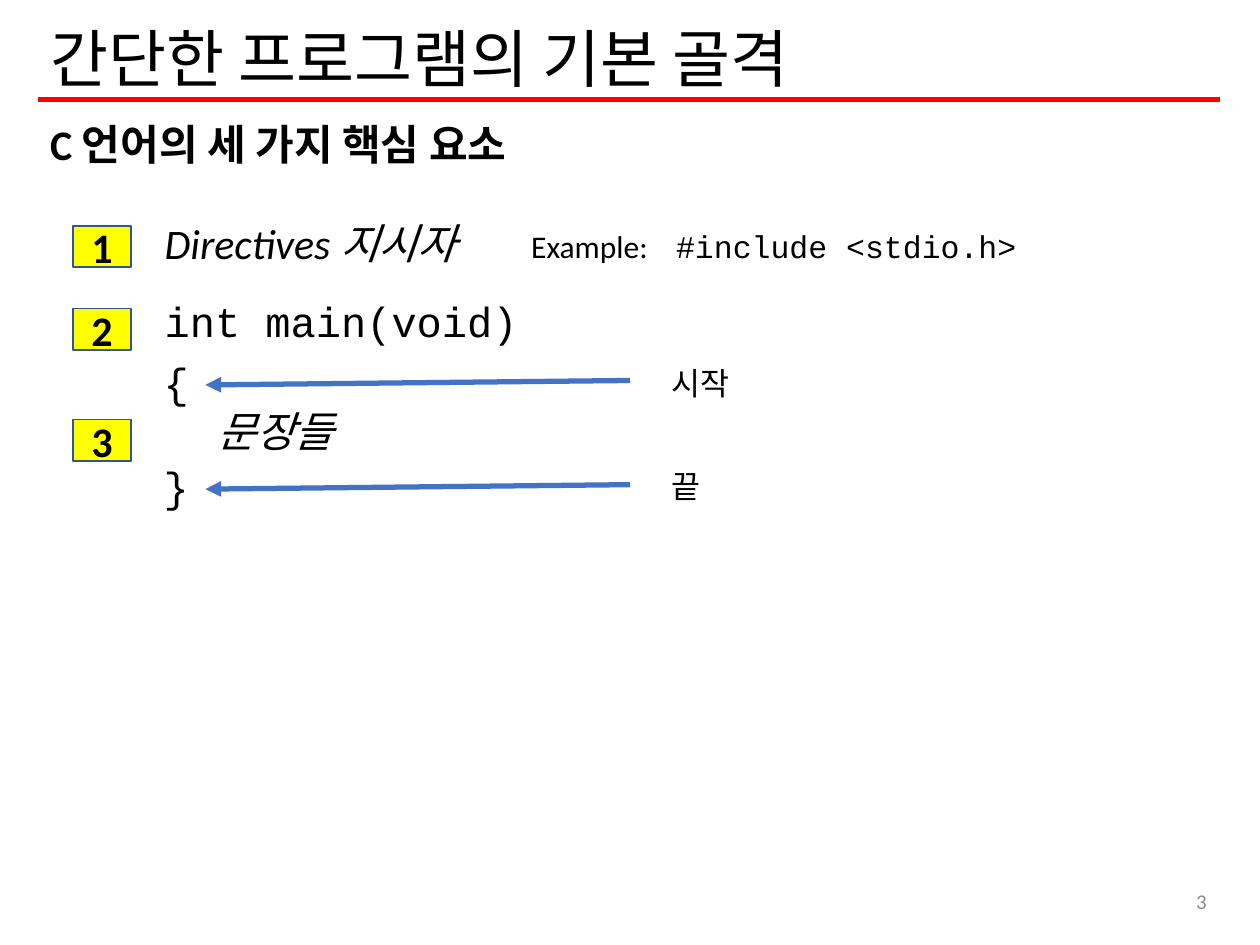
from lxml import etree
from pptx import Presentation
from pptx.dml.color import RGBColor
from pptx.enum.shapes import MSO_CONNECTOR, MSO_SHAPE
from pptx.enum.text import MSO_ANCHOR, MSO_AUTO_SIZE, PP_ALIGN
from pptx.oxml.ns import qn
from pptx.util import Cm, Pt

STRAIGHT = MSO_CONNECTOR.STRAIGHT
RECTANGLE = MSO_SHAPE.RECTANGLE
MIDDLE = MSO_ANCHOR.MIDDLE
LEFT, CENTER, RIGHT = PP_ALIGN.LEFT, PP_ALIGN.CENTER, PP_ALIGN.RIGHT
SANS, MONO = "Calibri", "Courier New"


def write(shape, text, size=24, font=SANS, color="000000", bold=False,
          italic=False, align=LEFT, spacing=1.0, wrap=True):
    """Fill a shape with one uniformly formatted paragraph and return it."""
    frame = shape.text_frame
    frame.word_wrap = wrap
    frame.auto_size = MSO_AUTO_SIZE.NONE
    paragraph = frame.paragraphs[0]
    paragraph.text = text
    paragraph.alignment = align
    paragraph.line_spacing = spacing
    paragraph.font.size = Pt(size)
    paragraph.font.name = font
    paragraph.font.bold = bold
    paragraph.font.italic = italic
    paragraph.font.color.rgb = RGBColor.from_string(color)
    return paragraph


def add_line(x1, y1, x2, y2, color):
    line = slide.shapes.add_connector(STRAIGHT, Cm(x1), Cm(y1), Cm(x2), Cm(y2))
    line.line.color.rgb = RGBColor.from_string(color)
    line.line.width = Pt(3)
    properties = line._element.spPr
    etree.SubElement(properties, qn("a:effectLst"))
    return line


deck = Presentation()
deck.slide_width, deck.slide_height = Cm(25.4), Cm(19.05)
slide = deck.slides.add_slide(deck.slide_layouts[5])

# Title with its rule
add_line(0.76, 2.01, 24.59, 2.01, "FF0000")
title = slide.shapes.title
title.left, title.top, title.width, title.height = Cm(0.76), Cm(0.69), Cm(23.83), Cm(1.14)
title.text_frame.vertical_anchor = MIDDLE
write(title, "간단한 프로그램의 기본 골격", size=36, spacing=0.9)

# Slide number
number_box = slide.shapes.add_textbox(Cm(17.93), Cm(17.65), Cm(6.65), Cm(1.02))
number_box.text_frame.vertical_anchor = MIDDLE
write(number_box, "3", size=12, color="8C8C8C", align=RIGHT)

# Heading, program skeleton and labels
code = {"font": MONO, "spacing": 0.8}
term = {"italic": True, "spacing": 0.8}
label = {"font": MONO, "size": 18, "wrap": False}
texts = [
    ("C 언어의 세 가지 핵심 요소", 0.76, 2.26, 10.46, 1.27, {"bold": True, "wrap": False}),
    ("Directives 지시자", 3.07, 4.45, 8.1, 1.09, term),
    ("int main(void)", 3.07, 6.02, 8.64, 1.12, code),
    ("{", 3.05, 7.26, 1.2, 1.12, code),
    ("문장들", 4.14, 8.25, 9.14, 1.09, term),
    ("}", 3.05, 9.36, 1.2, 1.12, code),
    ("시작", 13.28, 7.21, 1.93, 1.02, label),
    ("끝", 13.28, 9.3, 1.14, 1.02, label),
]
for text, left, top, width, height, style in texts:
    box = slide.shapes.add_textbox(Cm(left), Cm(top), Cm(width), Cm(height))
    write(box, text, **style)

# Directive example, with the code at a tab stop
example_box = slide.shapes.add_textbox(Cm(10.46), Cm(4.45), Cm(12.7), Cm(1.02))
example = write(example_box, "Example:\t", size=18)
code_span = example.add_run()
code_span.text = "#include <stdio.h>"
code_span.font.name = MONO
tab_list = etree.Element(qn("a:tabLst"))
etree.SubElement(tab_list, qn("a:tab"), pos=str(Cm(2.92)), algn="l")
example._p.pPr.find(qn("a:defRPr")).addprevious(tab_list)

# Numbered markers
for number, top in enumerate((4.55, 6.22, 8.46), start=1):
    marker = slide.shapes.add_shape(RECTANGLE, Cm(1.47), Cm(top), Cm(1.17), Cm(0.84))
    marker.shadow.inherit = False
    marker.fill.solid()
    marker.fill.fore_color.rgb = RGBColor.from_string("FFFF00")
    marker.line.color.rgb = RGBColor.from_string("325491")
    marker.line.width = Pt(1)
    marker.text_frame.vertical_anchor = MIDDLE
    write(marker, str(number), bold=True, align=CENTER)

# Arrows from the labels to the braces
for top in (7.67, 9.77):
    arrow = add_line(12.7, top, 4.14, top + 0.09, "4472C4")
    etree.SubElement(arrow.line._get_or_add_ln(), qn("a:tailEnd"), type="triangle")

deck.save("out.pptx")
